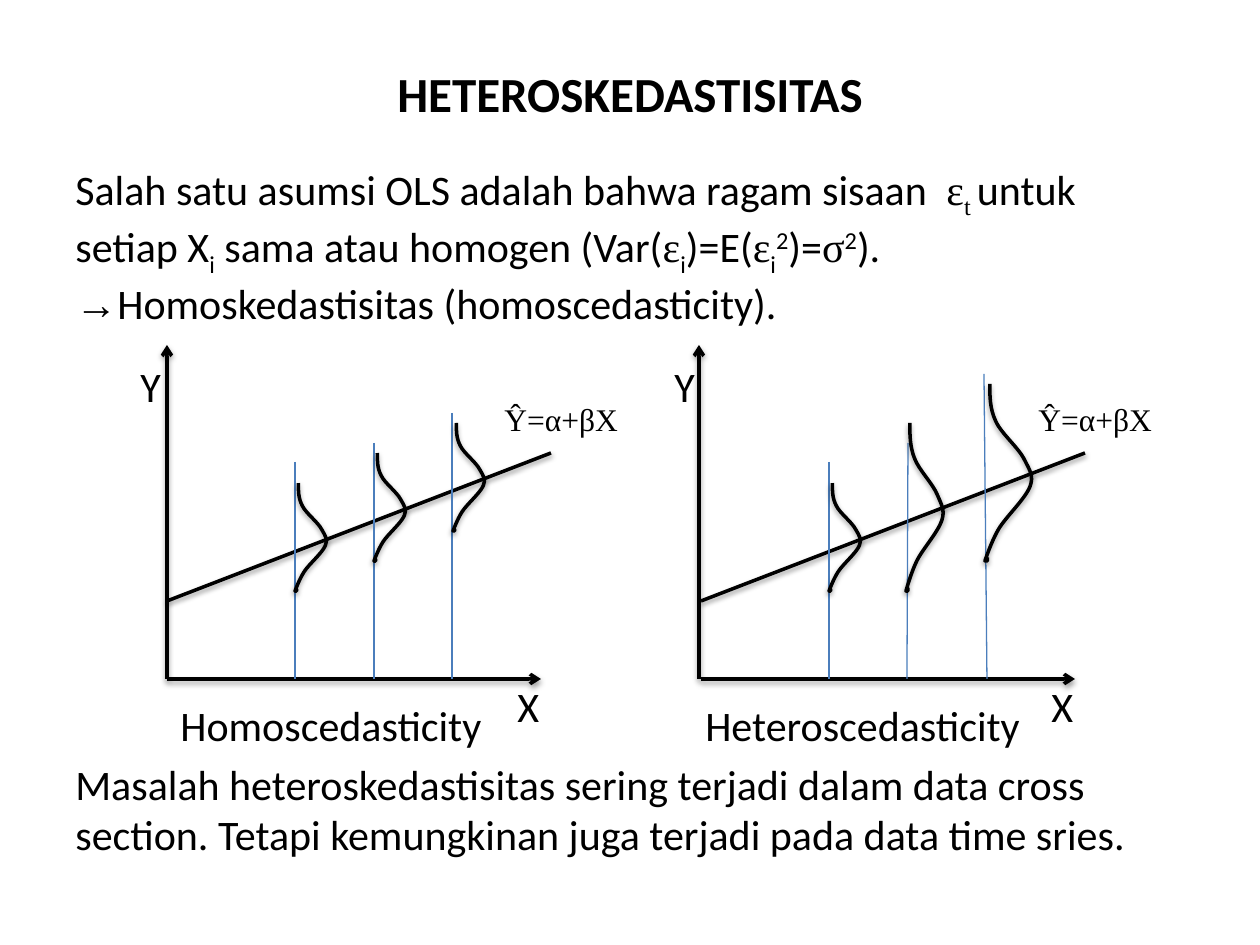
import pptx
import pptx.util
import pptx.dml.color
import pptx.enum.shapes
import pptx.enum.text
import pptx.oxml
import pptx.oxml.ns

PX = 914400 / 126
NS = pptx.oxml.ns.nsdecls("a")
SANS, SERIF = "Calibri", "Times New Roman"
BLACK, BLUE = "000000", "4B7EBC"


def write(left, top, width, height, rows, size=24, wrap=True):
    """Add a text box; each row is a list of (text, font, baseline in percent)."""
    box = slide.shapes.add_textbox(*[round(n * PX) for n in (left, top, width, height)])
    frame = box.text_frame
    frame.word_wrap = wrap
    for i, parts in enumerate(rows):
        para = frame.add_paragraph() if i else frame.paragraphs[0]
        for text, face, base in parts:
            run = para.add_run()
            run.text = text
            run.font.name = face
            run.font.size = pptx.util.Pt(size)
            run.font.color.rgb = pptx.dml.color.RGBColor.from_string(BLACK)
            if base:
                run.font._element.set("baseline", str(base * 1000))
    return frame


def style(shape, color, width, shade=True, arrow=False):
    """Set the line, arrowhead and shadow of a line or curve."""
    shape.line.color.rgb = pptx.dml.color.RGBColor.from_string(color)
    shape.line.width = pptx.util.Pt(width)
    if arrow:
        shape.line._get_or_add_ln().append(
            pptx.oxml.parse_xml(f'<a:tailEnd {NS} type="arrow"/>'))
    glow = ('<a:outerShdw blurRad="39370" dist="20320" dir="5400000" rotWithShape="0">'
            '<a:srgbClr val="000000"><a:alpha val="38000"/></a:srgbClr></a:outerShdw>')
    shape._element.spPr.append(
        pptx.oxml.parse_xml(f'<a:effectLst {NS}>{glow if shade else ""}</a:effectLst>'))


deck = pptx.Presentation()
deck.slide_width = round(1260 * PX)
deck.slide_height = round(945 * PX)
slide = deck.slides.add_slide(deck.slide_layouts[6])

title = write(63, 38, 1134, 110, [[("HETEROSKEDASTISITAS", SANS, 0)]], 28)
title.vertical_anchor = pptx.enum.text.MSO_ANCHOR.MIDDLE
title.paragraphs[0].alignment = pptx.enum.text.PP_ALIGN.CENTER
title.paragraphs[0].runs[0].font.bold = True

body = write(63, 157, 1134, 738, [
    [("Salah satu asumsi OLS adalah bahwa ragam sisaan  ", SANS, 0),
     ("ε", SERIF, 0), ("t ", SERIF, -25),
     ("untuk setiap X", SANS, 0), ("i", SANS, -25),
     (" sama atau homogen (Var(", SANS, 0),
     ("ε", SERIF, 0), ("i", SANS, -25), (")=E(", SANS, 0),
     ("ε", SERIF, 0), ("i", SANS, -25), ("2", SANS, 30), (")=", SANS, 0),
     ("σ", SERIF, 0), ("2", SANS, 30), ("). ", SANS, 0),
     ("→", SERIF, 0), ("Homoskedastisitas (homoscedasticity).", SANS, 0)],
    [("\tHomoscedasticity\tHeteroscedasticity", SANS, 0)],
    [("Masalah heteroskedastisitas sering terjadi dalam data cross section. "
      "Tetapi kemungkinan juga terjadi pada data time sries.", SANS, 0)]])
for para, gap in zip(body.paragraphs, (4.8, 212, 4.8)):
    para.space_before = pptx.util.Pt(gap)
stops = "".join(f'<a:tab pos="{round(n * PX)}" algn="l"/>' for n in (105, 630))
body.paragraphs[1]._p.get_or_add_pPr().append(
    pptx.oxml.parse_xml(f'<a:tabLst {NS}>{stops}</a:tabLst>'))

# Bell outline as fractions of its width and height: a start, then cubic curves
bell = [(.1, 0), (.1, .07), (.1, .14), (.22, .21), (.33, .28), (.69, .36), (.81, .43),
        (.92, .49), (1, .52), (.92, .58), (.82, .65), (.43, .75), (.28, .82),
        (.13, .89), (0, 1), (0, 1), (.02, 1), (.05, 1), (.05, 1),
        (.06, .99), (.07, .99), (.05, .98)]

# Each guide: top x, top y, foot x; each bell: left, top, width, height
panels = [
    (167, 167,
     [(295, 462, 295), (374, 443, 374), (452, 413, 452)],
     [(295, 483, 33, 108), (374, 453, 33, 108), (453, 423, 33, 108)]),
    (701, 699,
     [(829, 462, 829), (908, 443, 907), (984, 374, 987)],
     [(829, 483, 33, 108), (906, 423, 39, 168), (985, 384, 49, 177)]),
]
base = 679
for left, stem, guides, bells in panels:
    lines = [(stem, base, stem, 345, BLACK, 2, True, True),
             (left, base, left + 374, base, BLACK, 2, True, True),
             (left, 601, left + 384, 453, BLACK, 2, True, False)]
    lines += [(x, y, foot, base, BLUE, 0.75, False, False) for x, y, foot in guides]
    for *ends, color, width, shade, arrow in lines:
        line = slide.shapes.add_connector(
            pptx.enum.shapes.MSO_CONNECTOR.STRAIGHT, *[round(n * PX) for n in ends])
        style(line, color, width, shade, arrow)

    for x, y, wide, high in bells:
        dots = [(round((x + u * wide) * PX), round((y + v * high) * PX)) for u, v in bell]
        pen = slide.shapes.build_freeform(*dots[0], scale=1.0)
        pen.add_line_segments(dots[1:], close=False)
        shape = pen.convert_to_shape()
        # Join every three straight segments into one cubic curve
        parts = list(shape._element.iter(pptx.oxml.ns.qn("a:lnTo")))
        for i in range(0, len(parts), 3):
            cubic = pptx.oxml.parse_xml(f"<a:cubicBezTo {NS}/>")
            parts[i].addprevious(cubic)
            for part in parts[i:i + 3]:
                cubic.append(part[0])
                part.getparent().remove(part)
        shape.fill.background()
        style(shape, BLACK, 2)

    write(left - 39, 354, 47, 63, [[("Y", SANS, 0)]], wrap=False)
    write(left + 338, 674, 48, 63, [[("X", SANS, 0)]], wrap=False)
    write(left + 325, 394, 145, 50, [[("Ŷ=α+βX", SERIF, 0)]], 18, False)

deck.save("out.pptx")
